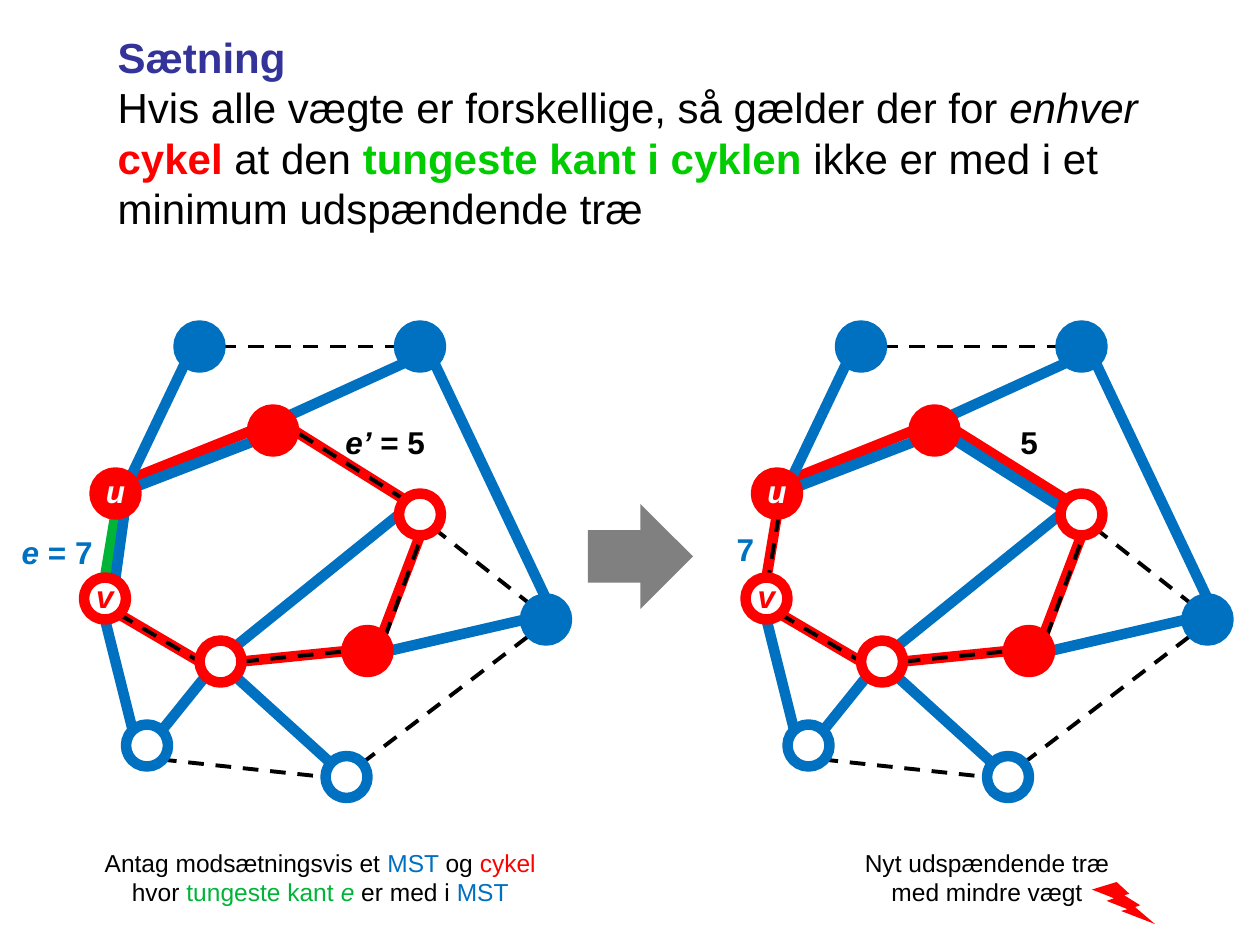
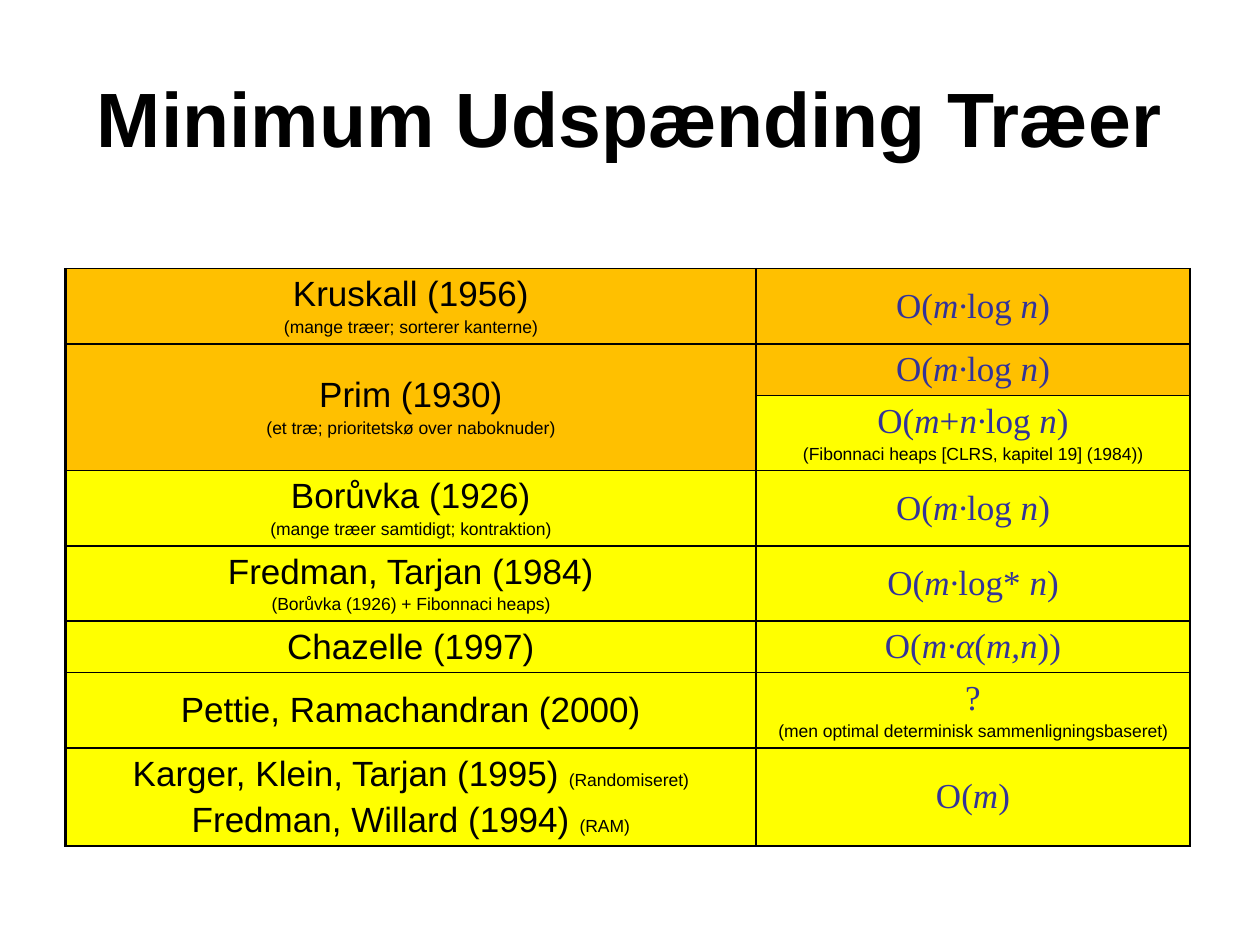
from lxml.etree import SubElement
from pptx import Presentation
from pptx.dml.color import RGBColor
from pptx.enum.dml import MSO_LINE
from pptx.enum.shapes import MSO_CONNECTOR, MSO_SHAPE
from pptx.enum.text import MSO_ANCHOR as ANCHOR, MSO_AUTO_SIZE, PP_ALIGN as ALIGN
from pptx.oxml.ns import qn
from pptx.util import Pt

# Colours and fonts
BLACK = RGBColor(0x00, 0x00, 0x00)
WHITE = RGBColor(0xFF, 0xFF, 0xFF)
BLUE = RGBColor(0x00, 0x70, 0xC0)
RED = RGBColor(0xFF, 0x00, 0x00)
GREEN = RGBColor(0x00, 0xB4, 0x38)
BRIGHT_GREEN = RGBColor(0x00, 0xCC, 0x00)
INDIGO = RGBColor(0x33, 0x33, 0x99)
GRAY = RGBColor(0x80, 0x80, 0x80)
ORANGE = RGBColor(0xFF, 0xC0, 0x00)
YELLOW = RGBColor(0xFF, 0xFF, 0x00)
SANS, SERIF = "Arial", "Times New Roman"
TITLE_ONLY = 5

# Graph geometry, relative to the left edge of each graph
GRAPH_SHIFT = 378
NODE_SIZE = 24
NODES = [  # left, top, colour, in filled style
    (102, 186, BLUE, True), (228, 186, BLUE, True), (300, 342, BLUE, True),
    (72, 414, BLUE, False), (186, 432, BLUE, False),
    (144, 234, RED, True), (54, 270, RED, True), (198, 360, RED, True),
    (228, 282, RED, False), (48, 330, RED, False), (114, 366, RED, False),
]
UNUSED_EDGES = [
    (126, 198, 228, 198), (92, 434, 186, 444),
    (304, 346, 248, 302), (207, 436, 304, 362),
]
CYCLE_EDGES = [
    (138, 378, 198, 372), (218, 364, 240, 306), (232, 286, 168, 246),
    (144, 246, 74, 274), (68, 351, 114, 378),
]
UNUSED_CYCLE_EDGES = [
    (139, 378, 199, 372), (220, 364, 241, 306), (68, 351, 114, 378),
]
TREE_EDGES = [
    (228, 294, 135, 369), (106, 207, 74, 274), (232, 207, 164, 238),
    (189, 436, 135, 387), (148, 251, 78, 278), (312, 342, 248, 207),
    (222, 372, 300, 354), (92, 418, 117, 387), (76, 418, 60, 354),
]
HEAVY_EDGE = (66, 294, 60, 330)

# Table rows: algorithm lines, running time lines, height, fills.
# None continues the cell above; underscores enclose italics in a formula.
M_LOG_N = "O(_m·_log _n_)"
ROWS = [
    (["Kruskall (1956)", "(mange træer; sorterer kanterne)"], [M_LOG_N], 43, ORANGE, ORANGE),
    (["Prim (1930)", "(et træ; prioritetskø over naboknuder)"], [M_LOG_N], 29.5, ORANGE, ORANGE),
    (None, ["O(_m_+_n·_log _n_)", "(Fibonnaci heaps [CLRS, kapitel 19] (1984))"],
     43, ORANGE, YELLOW),
    (["Borůvka (1926)", "(mange træer samtidigt; kontraktion)"], [M_LOG_N], 43, YELLOW, YELLOW),
    (["Fredman, Tarjan (1984)", "(Borůvka (1926) + Fibonnaci heaps)"],
     ["O(_m·_log* _n_)"], 43, YELLOW, YELLOW),
    (["Chazelle (1997)"], ["O(_m·α_(_m,n_))"], 29.5, YELLOW, YELLOW),
    (["Pettie, Ramachandran (2000)"],
     ["?", "(men optimal determinisk sammenligningsbaseret)"], 43, YELLOW, YELLOW),
    (["Karger, Klein, Tarjan (1995) |(Randomiseret)", "Fredman, Willard (1994) |(RAM)"],
     ["O(_m_)"], 56, YELLOW, YELLOW),
]


def add_span(para, text, size, color=BLACK, bold=False, italic=False, font=SANS):
    span = para.add_run()
    span.text = text
    span.font.name, span.font.size = font, Pt(size)
    span.font.bold, span.font.italic = bold, italic
    span.font.color.rgb = color


def place(shape, left, top, width, height):
    shape.left, shape.top = Pt(left), Pt(top)
    shape.width, shape.height = Pt(width), Pt(height)


def format_title(page, left, top, width, height, align, anchor):
    title = page.shapes.title
    place(title, left, top, width, height)
    frame = title.text_frame
    frame.word_wrap, frame.auto_size = True, MSO_AUTO_SIZE.NONE
    frame.vertical_anchor = anchor
    frame.paragraphs[0].alignment = align
    return frame


def add_text(page, left, top, width, height, spans, size, align=ALIGN.CENTER):
    """Each span is (text, colour, bold, italic)."""
    box = page.shapes.add_textbox(Pt(left), Pt(top), Pt(width), Pt(height))
    box.text_frame.word_wrap = True
    para = box.text_frame.paragraphs[0]
    para.alignment = align
    for text, color, bold, italic in spans:
        add_span(para, text, size, color, bold, italic)


def add_shape(page, kind, left, top, width, height, color, filled=True, line_width=0):
    shape = page.shapes.add_shape(kind, Pt(left), Pt(top), Pt(width), Pt(height))
    shape.shadow.inherit = False
    if filled:
        shape.fill.solid()
        shape.fill.fore_color.rgb = color
    else:
        shape.fill.background()
    if line_width:
        shape.line.color.rgb = color
        shape.line.width = Pt(line_width)
    else:
        shape.line.fill.background()


def add_edges(page, shift, edges, color, dashed=False):
    for x1, y1, x2, y2 in edges:
        edge = page.shapes.add_connector(
            MSO_CONNECTOR.STRAIGHT, Pt(x1 + shift), Pt(y1), Pt(x2 + shift), Pt(y2))
        edge.line.color.rgb = color
        edge.line.width = Pt(2.25 if dashed else 6)
        if dashed:
            edge.line.dash_style = MSO_LINE.DASH
        SubElement(edge._element.spPr, qn("a:effectLst"))


def draw_graph(page, shift, heavy_color, tree_swap, unused_swap):
    """Draw one graph; the swap edges are those that differ between the two trees."""
    add_edges(page, shift, UNUSED_EDGES, BLACK, dashed=True)
    add_edges(page, shift, [HEAVY_EDGE], heavy_color)
    add_edges(page, shift, CYCLE_EDGES, RED)
    add_edges(page, shift, TREE_EDGES + [tree_swap], BLUE)
    add_edges(page, shift, UNUSED_CYCLE_EDGES + [unused_swap], BLACK, dashed=True)
    for left, top, color, filled in NODES:
        add_shape(page, MSO_SHAPE.OVAL, left + shift, top, NODE_SIZE, NODE_SIZE,
                  color, filled, line_width=6)
    add_text(page, 48 + shift, 266, 36, 30, [("u", WHITE, True, True)], 18)
    add_text(page, 42 + shift, 326, 36, 30, [("v", RED, True, True)], 18)


def build_theorem(deck):
    page = deck.slides.add_slide(deck.slide_layouts[TITLE_ONLY])

    # Theorem
    frame = format_title(page, 60, 14.4, 630, 124, ALIGN.LEFT, ANCHOR.TOP)
    add_span(frame.paragraphs[0], "Sætning", 24, INDIGO, bold=True)
    para = frame.add_paragraph()
    para.alignment = ALIGN.LEFT
    for text, color, bold, italic in [
        ("Hvis alle vægte er forskellige, så gælder der for ", BLACK, False, False),
        ("enhver ", BLACK, False, True),
        ("cykel ", RED, True, False),
        ("at den ", BLACK, False, False),
        ("tungeste kant i cyklen ", BRIGHT_GREEN, True, False),
        ("ikke er med i et minimum udspændende træ", BLACK, False, False),
    ]:
        add_span(para, text, 24, color, bold, italic)

    # Graphs before and after the exchange of edges
    draw_graph(page, 0, GREEN, (71, 294, 66, 330), (232, 286, 168, 246))
    draw_graph(page, GRAPH_SHIFT, RED, (230, 291, 167, 251), (67, 295, 61, 331))
    add_shape(page, MSO_SHAPE.RIGHT_ARROW, 336, 288, 60, 60, GRAY)

    # Edge weights
    add_text(page, 0, 301, 60, 29, [("e", BLUE, True, True), (" = 7", BLUE, True, False)],
             18, ALIGN.RIGHT)
    add_text(page, 184, 238, 66, 29, [("e’", BLACK, True, True), (" = 5", BLACK, True, False)],
             18, ALIGN.RIGHT)
    add_text(page, 372, 299.5, 66, 29, [("7", BLUE, True, False)], 18, ALIGN.RIGHT)
    add_text(page, 576, 238, 26, 29, [("5", BLACK, True, False)], 18, ALIGN.LEFT)

    # Captions
    caption = [
        ("Antag modsætningsvis et ", BLACK), ("MST ", BLUE), ("og ", BLACK), ("cykel ", RED),
        ("hvor ", BLACK), ("tungeste kant ", GREEN), ("e", GREEN),
        (" er med i ", BLACK), ("MST", BLUE),
    ]
    add_text(page, 42, 481, 282, 41,
             [(text, color, False, text == "e") for text, color in caption], 14)
    add_text(page, 486, 481, 156, 41,
             [("Nyt udspændende træ med mindre vægt", BLACK, False, False)], 14)
    add_shape(page, MSO_SHAPE.LIGHTNING_BOLT, 624, 504, 36, 24, RED)


def set_borders(cell, left_width):
    properties = cell._tc.get_or_add_tcPr()
    widths = {"a:lnL": left_width, "a:lnR": 1, "a:lnT": 1, "a:lnB": 1}
    for index, (tag, width) in enumerate(widths.items()):
        line = properties.makeelement(qn(tag), {"w": str(Pt(width))})
        properties.insert(index, line)
        fill = SubElement(line, qn("a:solidFill"))
        SubElement(fill, qn("a:srgbClr"), val=str(BLACK))


def fill_cell(cell, lines, is_formula):
    """A bar splits a line into large text and a note; a bracketed line is a note."""
    frame = cell.text_frame
    for index, line in enumerate(lines):
        para = frame.add_paragraph() if index else frame.paragraphs[0]
        para.alignment = ALIGN.CENTER
        size = 10 if line.startswith("(") else 20
        if index:
            para.space_before = Pt(size * 0.2)
        if is_formula and size == 20:
            for part, text in enumerate(line.split("_")):
                if text:
                    add_span(para, text, size, INDIGO, italic=part % 2 == 1, font=SERIF)
        else:
            for part, text in enumerate(line.split("|")):
                add_span(para, text, 10 if part else size)


def build_algorithms(deck):
    page = deck.slides.add_slide(deck.slide_layouts[TITLE_ONLY])
    frame = format_title(page, 36, 21.6, 648, 90, ALIGN.CENTER, ANCHOR.MIDDLE)
    add_span(frame.paragraphs[0], "Minimum Udspænding Træer", 44, bold=True)

    # Algorithms and their running times
    table = page.shapes.add_table(
        len(ROWS), 2, Pt(37.5), Pt(153.5), Pt(642.5), Pt(330)).table
    table.first_row = table.horz_banding = False
    table.columns[0].width, table.columns[1].width = Pt(394.5), Pt(248)
    for index, (names, times, height, name_fill, time_fill) in enumerate(ROWS):
        table.rows[index].height = Pt(height)
        for column, (lines, color) in enumerate([(names, name_fill), (times, time_fill)]):
            cell = table.cell(index, column)
            cell.vertical_anchor = ANCHOR.MIDDLE
            cell.fill.solid()
            cell.fill.fore_color.rgb = color
            set_borders(cell, 1 if column else 2.25)
            if lines is None:
                table.cell(index - 1, column).merge(cell)
            else:
                fill_cell(cell, lines, is_formula=column == 1)


def main():
    deck = Presentation()
    deck.slide_width, deck.slide_height = Pt(720), Pt(540)
    build_theorem(deck)
    build_algorithms(deck)
    deck.save("out.pptx")


if __name__ == "__main__":
    main()
